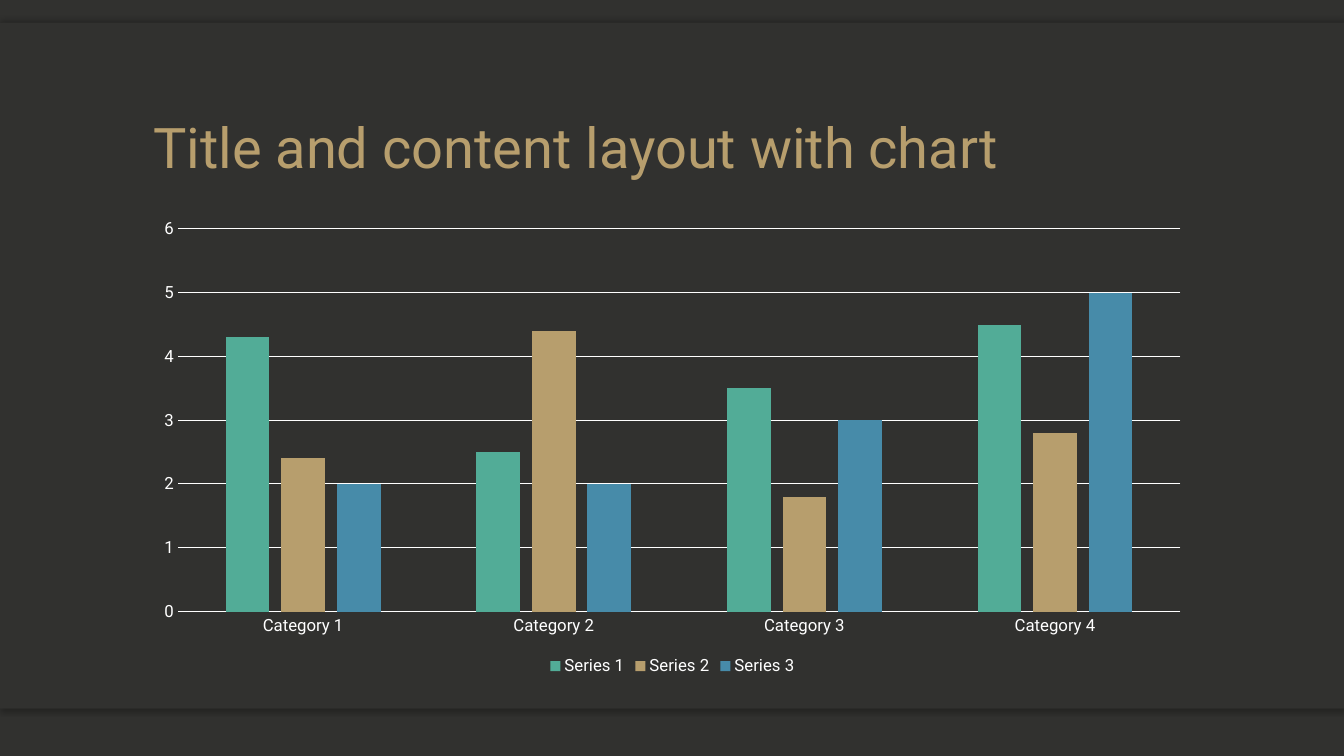
from lxml import etree
from pptx import Presentation
from pptx.chart.data import CategoryChartData
from pptx.dml.color import RGBColor
from pptx.enum.chart import XL_CHART_TYPE as ChartType
from pptx.enum.chart import XL_LEGEND_POSITION as LegendPosition
from pptx.enum.chart import XL_TICK_MARK as TickMark
from pptx.enum.shapes import MSO_SHAPE as Shape
from pptx.enum.text import MSO_ANCHOR as Anchor
from pptx.enum.text import MSO_AUTO_SIZE as AutoSize
from pptx.enum.text import PP_ALIGN as Align
from pptx.oxml.ns import qn
from pptx.util import Cm, Pt

FONT = "Roboto"
COLORS = {
    "background": "31312F",
    "shadow": "000000",
    "text": "FFFFFF",
    "green": "52AC97",
    "gold": "B79E6D",
    "blue": "478BA9",
}
WIDTH, HEIGHT = 33.87, 19.05

CATEGORIES = [f"Category {number}" for number in range(1, 5)]
SERIES = [
    ("Series 1", (4.3, 2.5, 3.5, 4.5), "green"),
    ("Series 2", (2.4, 4.4, 1.8, 2.8), "gold"),
    ("Series 3", (2, 2, 3, 5), "blue"),
]


def color(name):
    return RGBColor.from_string(COLORS[name])


def style_font(font, size, color_name):
    font.name = FONT
    font.size = Pt(size)
    font.color.rgb = color(color_name)


def style_line(line):
    line.color.rgb = color("text")
    line.width = Pt(0.75)


def add_shadow(shape, direction):
    """Soft shadow; direction is in degrees, clockwise from the right."""
    effects = shape._element.spPr.find(qn("a:effectLst"))
    shadow = etree.SubElement(
        effects, qn("a:outerShdw"), blurRad=str(Pt(4)), dist=str(Pt(2)),
        dir=str(direction * 60000), algn="ctr", rotWithShape="0")
    shade = etree.SubElement(shadow, qn("a:srgbClr"), val=COLORS["shadow"])
    etree.SubElement(shade, qn("a:alpha"), val="25000")


def add_panel(slide, left, top, width, height):
    """Two shadowed strips along the edges, covered by a plain panel."""
    strip = 1.24
    parts = [
        (top + height - strip, strip, 90),
        (top, strip, 270),
        (top, height, None),
    ]
    for part_top, part_height, direction in parts:
        shape = slide.shapes.add_shape(
            Shape.RECTANGLE, Cm(left), Cm(part_top), Cm(width), Cm(part_height))
        shape.shadow.inherit = False
        shape.fill.solid()
        shape.fill.fore_color.rgb = color("background")
        shape.line.fill.background()
        if direction is not None:
            add_shadow(shape, direction)


def place_title(slide, text, left, top, width, height):
    title = slide.shapes.title
    # Bring the title in front of the panel
    title.element.getparent().append(title.element)
    title.left, title.top = Cm(left), Cm(top)
    title.width, title.height = Cm(width), Cm(height)
    frame = title.text_frame
    frame.word_wrap = True
    frame.auto_size = AutoSize.NONE
    frame.vertical_anchor = Anchor.BOTTOM
    paragraph = frame.paragraphs[0]
    paragraph.alignment = Align.LEFT
    paragraph.line_spacing = 0.9
    run = paragraph.add_run()
    run.text = text
    style_font(run.font, 40, "gold")


def add_column_chart(slide, left, top, width, height):
    data = CategoryChartData()
    data.categories = CATEGORIES
    for name, values, _ in SERIES:
        data.add_series(name, values)
    chart = slide.shapes.add_chart(
        ChartType.COLUMN_CLUSTERED, Cm(left), Cm(top), Cm(width), Cm(height),
        data).chart
    chart.has_title = False
    style_font(chart.font, 10, "text")

    # Columns
    plot = chart.plots[0]
    plot.vary_by_categories = False
    plot.gap_width = 219
    plot.overlap = -27
    for series, (_, _, color_name) in zip(plot.series, SERIES):
        series.format.fill.solid()
        series.format.fill.fore_color.rgb = color(color_name)

    # Axes
    for axis in (chart.category_axis, chart.value_axis):
        axis.major_tick_mark = TickMark.NONE
        axis.minor_tick_mark = TickMark.NONE
        style_font(axis.tick_labels.font, 12, "text")
    style_line(chart.category_axis.format.line)
    value_axis = chart.value_axis
    value_axis.minimum_scale = 0
    value_axis.maximum_scale = 6
    value_axis.major_unit = 1
    value_axis.format.line.fill.background()
    value_axis.has_major_gridlines = True
    style_line(value_axis.major_gridlines.format.line)

    # Legend
    chart.has_legend = True
    chart.legend.position = LegendPosition.BOTTOM
    chart.legend.include_in_layout = False
    style_font(chart.legend.font, 12, "text")


def main():
    presentation = Presentation()
    presentation.slide_width = Cm(WIDTH)
    presentation.slide_height = Cm(HEIGHT)
    slide = presentation.slides.add_slide(presentation.slide_layouts[5])
    slide.background.fill.solid()
    slide.background.fill.fore_color.rgb = color("background")

    left, content_width = 3.61, 26.67
    add_panel(slide, 0, 0.58, WIDTH, 17.27)
    place_title(slide, "Title and content layout with chart",
                left, 1.17, content_width, 3.51)
    add_column_chart(slide, left, 5.28, content_width, 11.86)
    presentation.save("out.pptx")


if __name__ == "__main__":
    main()
